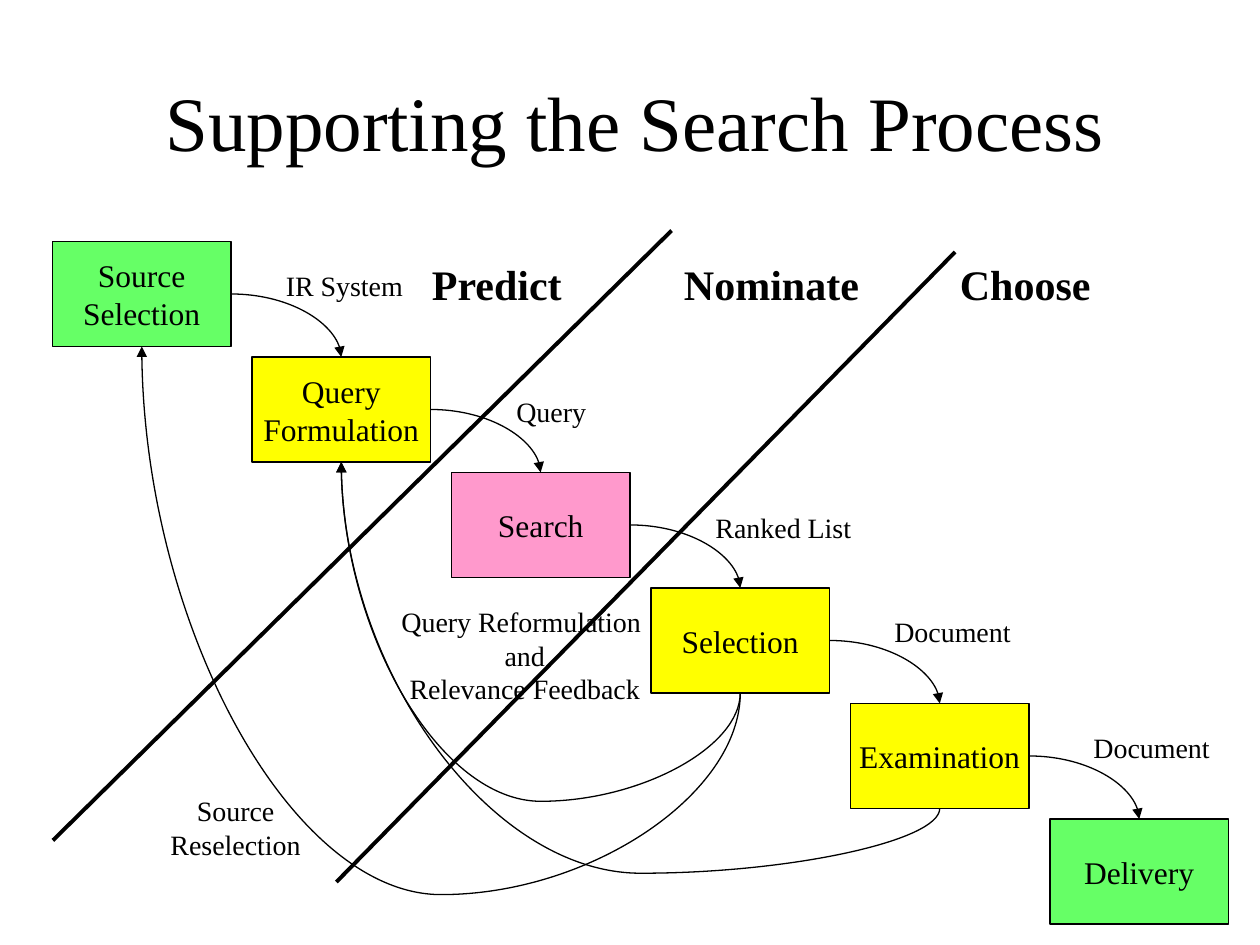
from lxml.etree import SubElement
from pptx import Presentation
from pptx.dml.color import RGBColor
from pptx.enum.shapes import MSO_CONNECTOR, MSO_SHAPE
from pptx.enum.text import MSO_ANCHOR, MSO_AUTO_SIZE, PP_ALIGN
from pptx.oxml.ns import qn
from pptx.util import Inches, Pt

FONT, BLACK = "Times New Roman", "000000"
GREEN, YELLOW, PINK = "66FF66", "FFFF00", "FF99CC"

TITLE = "Supporting the Search Process"
# Each stage: lines of text, fill
STAGES = [
    (["Source", "Selection"], GREEN),
    (["Query", "Formulation"], YELLOW),
    (["Search"], PINK),
    (["Selection"], YELLOW),
    (["Examination"], YELLOW),
    (["Delivery"], GREEN),
]
# Feedback loops: from stage, to stage, lowest y
LOOPS = [(3, 1, 6.36), (4, 1, 6.93), (3, 0, 7.1)]
# Lines between the phases: start, end
DIVIDERS = [((2.67, 7), (7.58, 2)), ((0.42, 6.67), (5.33, 1.83))]
# Labels: lines, (left, top, width, height)
HANDOVERS = [
    (["IR System"], (2.17, 2.08, 1.14, 0.37)),
    (["Query"], (4, 3.08, 0.76, 0.37)),
    (["Ranked List"], (5.58, 4, 1.28, 0.37)),
    (["Document"], (7, 4.83, 1.13, 0.37)),
    (["Document"], (8.58, 5.75, 1.13, 0.37)),
]
FEEDBACK = [
    (["Query Reformulation ", "and", "Relevance Feedback"], (3.08, 4.75, 2.17, 0.9)),
    (["Source", "Reselection"], (1.25, 6.25, 1.24, 0.64)),
]
PHASES = [
    (["Predict"], (3.33, 2, 1.24, 0.5)),
    (["Nominate"], (5.33, 2, 1.59, 0.5)),
    (["Choose"], (7.52, 2, 1.24, 0.5)),
]

# Staircase of stages, on a grid of twelfths of an inch
LEFT, TOP = 5 / 12, 23 / 12
STEP_X, STEP_Y = 19 / 12, 11 / 12
BOX_W, BOX_H = 17 / 12, 10 / 12


def color(value):
    return RGBColor.from_string(value)


def write(frame, lines, size, align, bold=False):
    for i, line in enumerate(lines):
        paragraph = frame.paragraphs[0] if i == 0 else frame.add_paragraph()
        paragraph.alignment = align
        run = paragraph.add_run()
        run.text = line
        run.font.name, run.font.size, run.font.bold = FONT, Pt(size), bold
        run.font.color.rgb = color(BLACK)


def add_label(slide, lines, place, size, align=PP_ALIGN.LEFT, bold=False):
    frame = slide.shapes.add_textbox(*map(Inches, place)).text_frame
    frame.word_wrap = False
    frame.auto_size = MSO_AUTO_SIZE.SHAPE_TO_FIT_TEXT
    write(frame, lines, size, align, bold)


def add_line(slide, kind, start, end, weight, arrow=False):
    line = slide.shapes.add_connector(kind, *map(Inches, (*start, *end)))
    line.line.color.rgb = color(BLACK)
    line.line.width = Pt(weight)
    properties = line._element.spPr
    if arrow:
        SubElement(properties.find(qn("a:ln")), qn("a:tailEnd"), type="triangle")
    SubElement(properties, qn("a:effectLst"))
    return line


def add_step(slide, start, end):
    """Quarter curve that leaves sideways and arrives from above."""
    step = add_line(slide, MSO_CONNECTOR.CURVE, start, end, 0.75, arrow=True)
    step._element.spPr.find(qn("a:prstGeom")).set("prst", "curvedConnector2")


def add_loop(slide, start, end, lowest):
    """Curve that leaves downwards and comes back up to the left."""
    loop = add_line(slide, MSO_CONNECTOR.CURVE, start, end, 0.75, arrow=True)
    across, rise = start[0] - end[0], start[1] - end[1]
    # The frame is turned a quarter, so its width is the rise
    loop.left = Inches((start[0] + end[0] - rise) / 2)
    loop.top = Inches((start[1] + end[1] - across) / 2)
    loop.width, loop.height = Inches(rise), Inches(across)
    frame = loop._element.spPr.find(qn("a:xfrm"))
    frame.attrib.pop("flipH", None)
    frame.set("rot", str(270 * 60000))
    frame.set("flipV", "1")
    bend = round((start[1] - lowest) / rise * 100000)
    guides = loop._element.spPr.find(qn("a:prstGeom")).get_or_add_avLst()
    SubElement(guides, qn("a:gd"), name="adj1", fmla=f"val {bend}")


def corner(i):
    return LEFT + i * STEP_X, TOP + i * STEP_Y


def anchor(i, across, down):
    x, y = corner(i)
    return x + across * BOX_W, y + down * BOX_H


def main():
    deck = Presentation()
    deck.slide_width, deck.slide_height = Inches(10), Inches(7.5)
    slide = deck.slides.add_slide(deck.slide_layouts[6])

    # Title
    title = slide.shapes.add_textbox(*map(Inches, (0.58, 0.33, 8.92, 1.25))).text_frame
    title.word_wrap = True
    title.vertical_anchor = MSO_ANCHOR.MIDDLE
    write(title, [TITLE], 44, PP_ALIGN.CENTER)

    # Stages
    for i, (lines, fill) in enumerate(STAGES):
        box = slide.shapes.add_shape(
            MSO_SHAPE.RECTANGLE, *map(Inches, (*corner(i), BOX_W, BOX_H)))
        box.shadow.inherit = False
        box.fill.solid()
        box.fill.fore_color.rgb = color(fill)
        box.line.color.rgb = color(BLACK)
        box.line.width = Pt(0.75)
        box.text_frame.word_wrap = False
        box.text_frame.vertical_anchor = MSO_ANCHOR.MIDDLE
        write(box.text_frame, lines, 18, PP_ALIGN.CENTER)

    # Arrows from stage to stage, and back
    for i in range(len(STAGES) - 1):
        add_step(slide, anchor(i, 1, 0.5), anchor(i + 1, 0.5, 0))
    for source, target, lowest in LOOPS:
        add_loop(slide, anchor(source, 0.5, 1), anchor(target, 0.5, 1), lowest)

    # Phase dividers
    for start, end in DIVIDERS:
        add_line(slide, MSO_CONNECTOR.STRAIGHT, start, end, 2.25)

    # Labels
    for lines, place in HANDOVERS:
        add_label(slide, lines, place, 16)
    for lines, place in FEEDBACK:
        add_label(slide, lines, place, 16, PP_ALIGN.CENTER)
    for lines, place in PHASES:
        add_label(slide, lines, place, 24, bold=True)

    deck.save("out.pptx")


if __name__ == "__main__":
    main()
